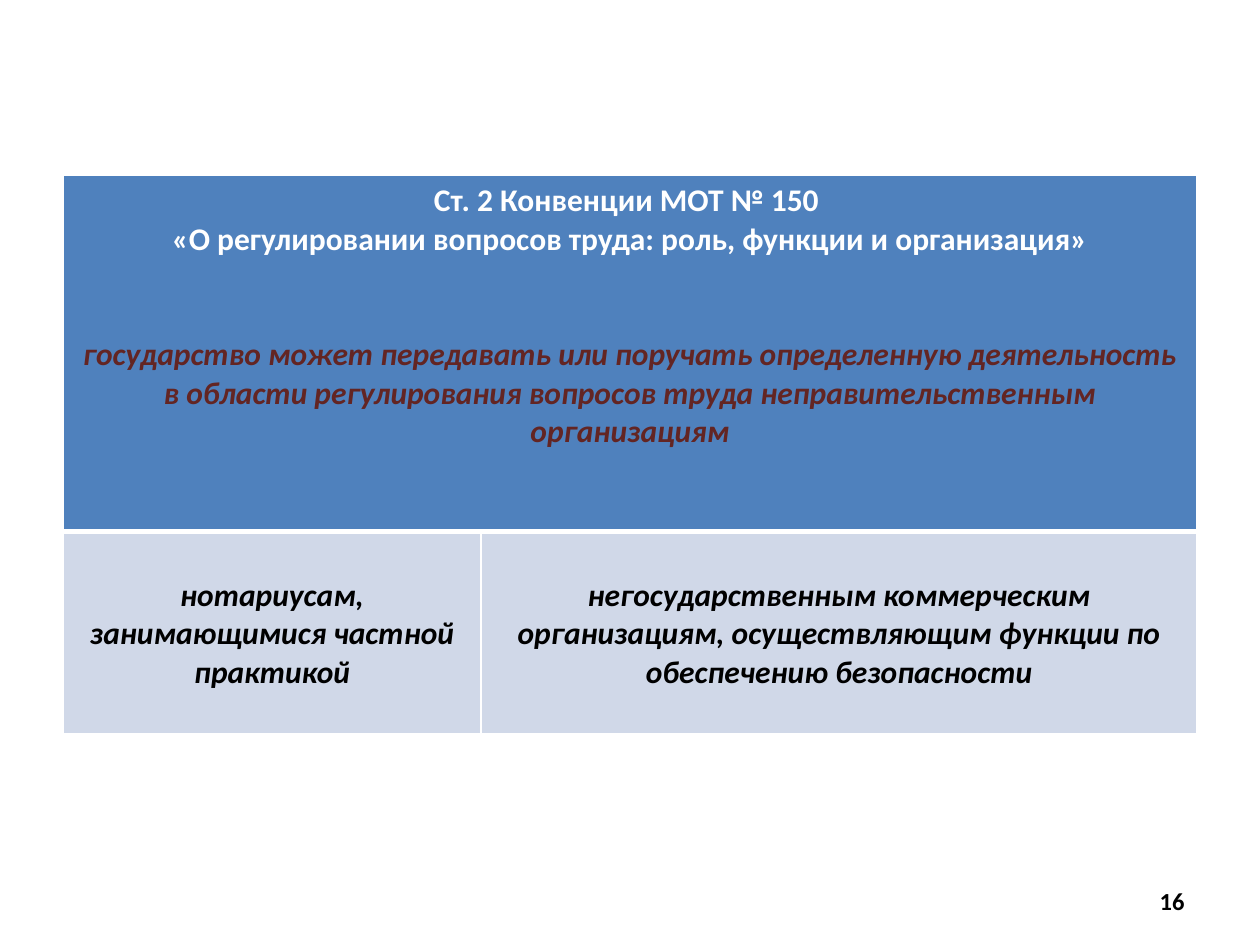
from dataclasses import dataclass

from lxml import etree
from pptx import Presentation
from pptx import util as u
from pptx.dml.color import RGBColor
from pptx.enum import text
from pptx.oxml.ns import qn

Pt = u.Pt
HEX = {"white": "FFFFFF", "black": "000000", "blue": "4F81BD",
       "pale": "D0D8E8", "wine": "632523"}
COLS = (239, 409)
ROWS = (203.5, 115.5)


@dataclass
class Line:
    words: str
    color: str = "black"
    slant: bool = True
    gap: float = 0
    size: float = 18


@dataclass
class Box:
    row: int
    col: int
    fill: str
    top: float
    lines: tuple


BOXES = (
    Box(0, 0, "blue", 3.6, (
        Line("Ст. 2 Конвенции МОТ № 150 ", "white", False),
        Line("«О регулировании вопросов труда: роль, функции и организация»",
             "white", False),
        Line("государство может передавать или поручать определенную "
             "деятельность в области регулирования вопросов труда "
             "неправительственным организациям", "wine", gap=44),
    )),
    Box(1, 0, "pale", 25.6, (
        Line("нотариусам, занимающимися частной практикой"),)),
    Box(1, 1, "pale", 25.6, (
        Line("негосударственным коммерческим организациям, осуществляющим "
             "функции по обеспечению безопасности"),)),
)


def write(frame, lines: tuple, align) -> None:
    frame.text = "\n".join(line.words for line in lines)
    for para, line in zip(frame.paragraphs, lines):
        para.alignment = align
        para.space_before = Pt(line.gap)
        font = para.runs[0].font
        font.name = "Calibri"
        font.size = Pt(line.size)
        font.bold = True
        font.italic = line.slant
        font.color.rgb = RGBColor.from_string(HEX[line.color])


def edge(cell, row: int) -> None:
    thick = {"L": 1, "R": 1, "T": 1 if row == 0 else 3, "B": 3 if row == 0 else 1}
    props = cell._tc.get_or_add_tcPr()
    for side, width in thick.items():
        line = etree.SubElement(props, qn(f"a:ln{side}"), w=str(Pt(width)))
        fill = etree.SubElement(line, qn("a:solidFill"))
        etree.SubElement(fill, qn("a:srgbClr"), val=HEX["white"])


def draw(grid, box: Box) -> None:
    cell = grid.cell(box.row, box.col)
    cell.fill.solid()
    cell.fill.fore_color.rgb = RGBColor.from_string(HEX[box.fill])
    cell.margin_top = Pt(box.top)
    write(cell.text_frame, box.lines, text.PP_ALIGN.CENTER)


def main() -> None:
    deck = Presentation()
    deck.slide_width, deck.slide_height = Pt(720), Pt(540)
    slide = deck.slides.add_slide(deck.slide_layouts[6])

    grid = slide.shapes.add_table(
        len(ROWS), len(COLS), Pt(36), Pt(100.3), Pt(sum(COLS)), Pt(sum(ROWS))).table
    for col, width in zip(grid.columns, COLS):
        col.width = Pt(width)
    for row, height in zip(grid.rows, ROWS):
        row.height = Pt(height)
    for row in range(len(ROWS)):
        for col in range(len(COLS)):
            edge(grid.cell(row, col), row)
    grid.cell(0, 0).merge(grid.cell(0, 1))
    for box in BOXES:
        draw(grid, box)

    page = slide.shapes.add_textbox(Pt(516), Pt(500.5), Pt(168), Pt(28.75))
    frame = page.text_frame
    frame.word_wrap = True
    frame.vertical_anchor = text.MSO_ANCHOR.MIDDLE
    write(frame, (Line("16", slant=False, size=14),), text.PP_ALIGN.RIGHT)

    deck.save("out.pptx")


if __name__ == "__main__":
    main()
